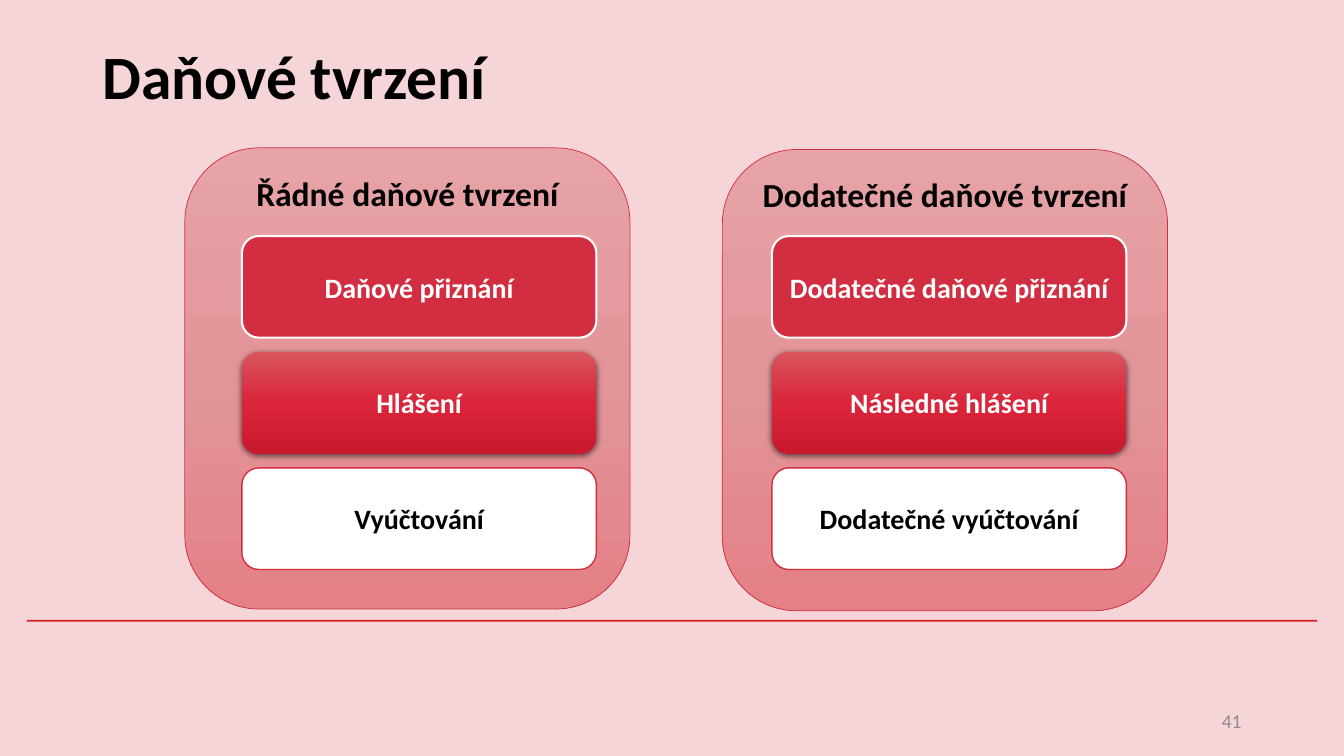
from copy import deepcopy

from lxml import etree
from pptx import Presentation
from pptx.dml.color import RGBColor
from pptx.enum.shapes import MSO_SHAPE
from pptx.enum.text import MSO_ANCHOR, PP_ALIGN
from pptx.oxml.ns import qn
from pptx.util import Inches, Pt

RECT, ROUND = MSO_SHAPE.RECTANGLE, MSO_SHAPE.ROUNDED_RECTANGLE
LEFT, CENTER, RIGHT = PP_ALIGN.LEFT, PP_ALIGN.CENTER, PP_ALIGN.RIGHT
TOP, MIDDLE = MSO_ANCHOR.TOP, MSO_ANCHOR.MIDDLE

COLUMNS, ROWS = 16, 9
BLACK, WHITE, RED = "000000", "FFFFFF", "D22D40"
PANEL_FILL = ("E7A3A7", "E29599", "E38186")
GLOSSY_FILL = ("D8555E", "DA253A", "C9192E")


def rgb(value):
    return RGBColor.from_string(value)


def write(s, text, size=20, color=BLACK, bold=True, align=CENTER,
          anchor=MIDDLE, side=0.1, top=0.05, font="Calibri"):
    tf = s.text_frame
    tf.word_wrap = True
    tf.vertical_anchor = anchor
    tf.margin_left = tf.margin_right = Inches(side)
    tf.margin_top = Inches(top)
    p = tf.paragraphs[0]
    p.alignment = align
    r = p.add_run()
    r.text = text
    r.font.name, r.font.size, r.font.bold = font, Pt(size), bold
    r.font.color.rgb = rgb(color)


class Deck:
    def __init__(self, background):
        self.prs = Presentation()
        self.prs.slide_width, self.prs.slide_height = Inches(13.333), Inches(7.5)
        self.slide = self.prs.slides.add_slide(self.prs.slide_layouts[6])
        fill = self.slide.background.fill
        fill.solid()
        fill.fore_color.rgb = rgb(background)

    def place(self, x, y, w, h):
        col, row = self.prs.slide_width / COLUMNS, self.prs.slide_height / ROWS
        return [round(v) for v in (x * col, y * row, w * col, h * row)]

    def label(self, box, text, **style):
        s = self.slide.shapes.add_textbox(*self.place(*box))
        write(s, text, **style)

    def shape(self, kind, box, fill, line=None, width=1):
        s = self.slide.shapes.add_shape(kind, *self.place(*box))
        s.shadow.inherit = False
        if isinstance(fill, tuple):
            self.gradient(s, fill)
        else:
            s.fill.solid()
            s.fill.fore_color.rgb = rgb(fill)
        if line:
            s.line.color.rgb = rgb(line)
            s.line.width = Pt(width)
        else:
            s.line.fill.background()
        return s

    def gradient(self, s, colors):
        s.fill.gradient()
        s.fill.gradient_angle = 270
        stops = s._element.spPr.find(".//" + qn("a:gsLst"))
        stops.append(deepcopy(stops[0]))
        for i, (stop, color) in enumerate(zip(s.fill.gradient_stops, colors)):
            stop.position = i / (len(colors) - 1)
            stop.color.rgb = rgb(color)

    def drop_shadow(self, s):
        effects = s._element.spPr.find(qn("a:effectLst"))
        shadow = etree.SubElement(
            effects, qn("a:outerShdw"), blurRad=str(Pt(4.5)), dist=str(Pt(1.5)),
            dir="5400000", algn="ctr", rotWithShape="0")
        color = etree.SubElement(shadow, qn("a:srgbClr"), val=BLACK)
        etree.SubElement(color, qn("a:alpha"), val="63000")

    def panel(self, x, y, heading):
        s = self.shape(ROUND, (x, y, 5.3, 5.49), PANEL_FILL, RED, 0.5)
        write(s, heading, size=24, anchor=TOP, top=0.03)

    def button(self, x, row, text, fill, line, width, color, raised):
        s = self.shape(ROUND, (x, 2.81 + 1.38 * row, 4.22, 1.21), fill, line, width)
        if raised:
            self.drop_shadow(s)
        write(s, text, color=color, side=0.05)


BUTTON_STYLES = (
    (RED, WHITE, 1.5, WHITE, False),
    (GLOSSY_FILL, None, 0, WHITE, True),
    (WHITE, RED, 1, BLACK, False),
)
GROUPS = (
    (2.2, 1.76, 2.88, "Řádné daňové tvrzení",
     ("Daňové přiznání", "Hlášení", "Vyúčtování")),
    (8.6, 1.78, 9.19, "Dodatečné daňové tvrzení",
     ("Dodatečné daňové přiznání", "Následné hlášení", "Dodatečné vyúčtování")),
)


def main():
    deck = Deck("F6D5D9")
    deck.shape(RECT, (0.32, 7.38, 15.36, 0.02), "CD1F21")
    deck.label((1.1, 0.02, 13.8, 1.74), "Daňové tvrzení", size=44, align=LEFT)
    deck.label((11.3, 8.34, 3.6, 0.48), "41", size=14, color="8C8C8C",
               bold=False, align=RIGHT)
    for panel_x, panel_y, button_x, heading, names in GROUPS:
        deck.panel(panel_x, panel_y, heading)
        for row, (name, style) in enumerate(zip(names, BUTTON_STYLES)):
            deck.button(button_x, row, name, *style)
    deck.prs.save("out.pptx")


if __name__ == "__main__":
    main()
